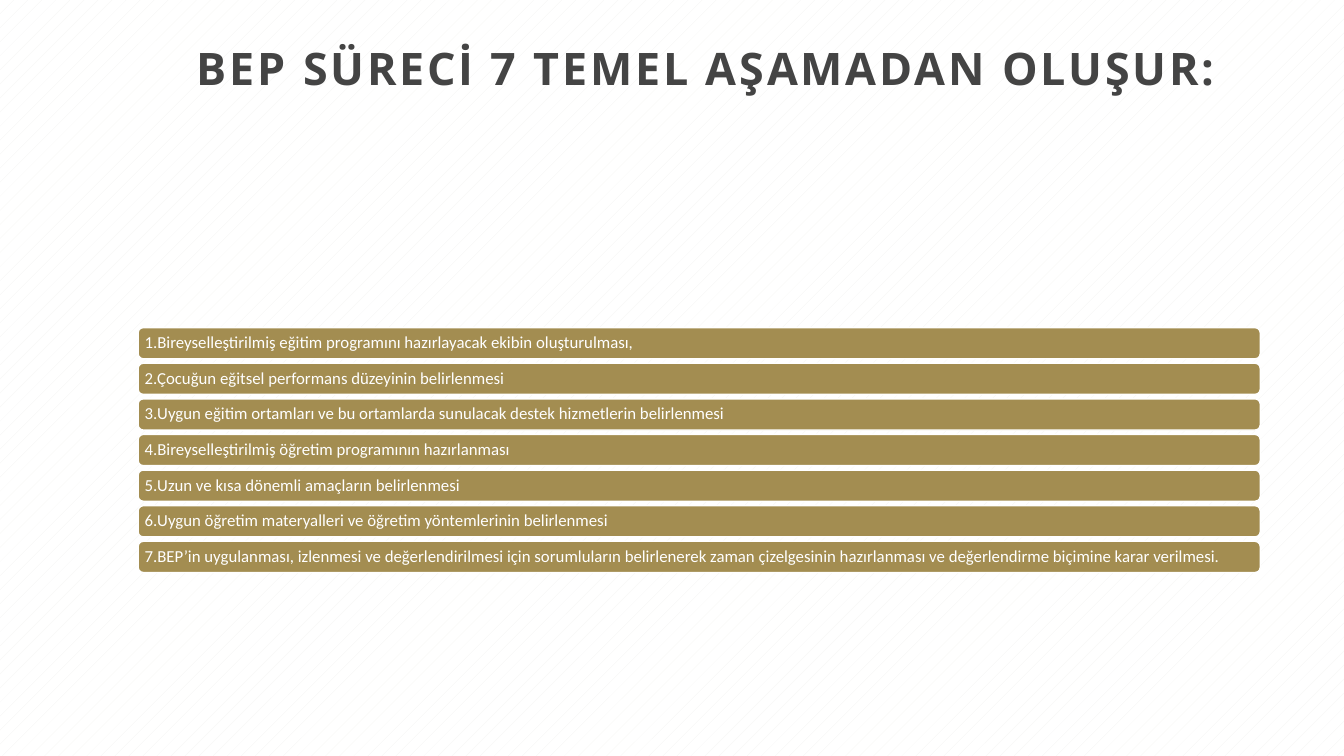
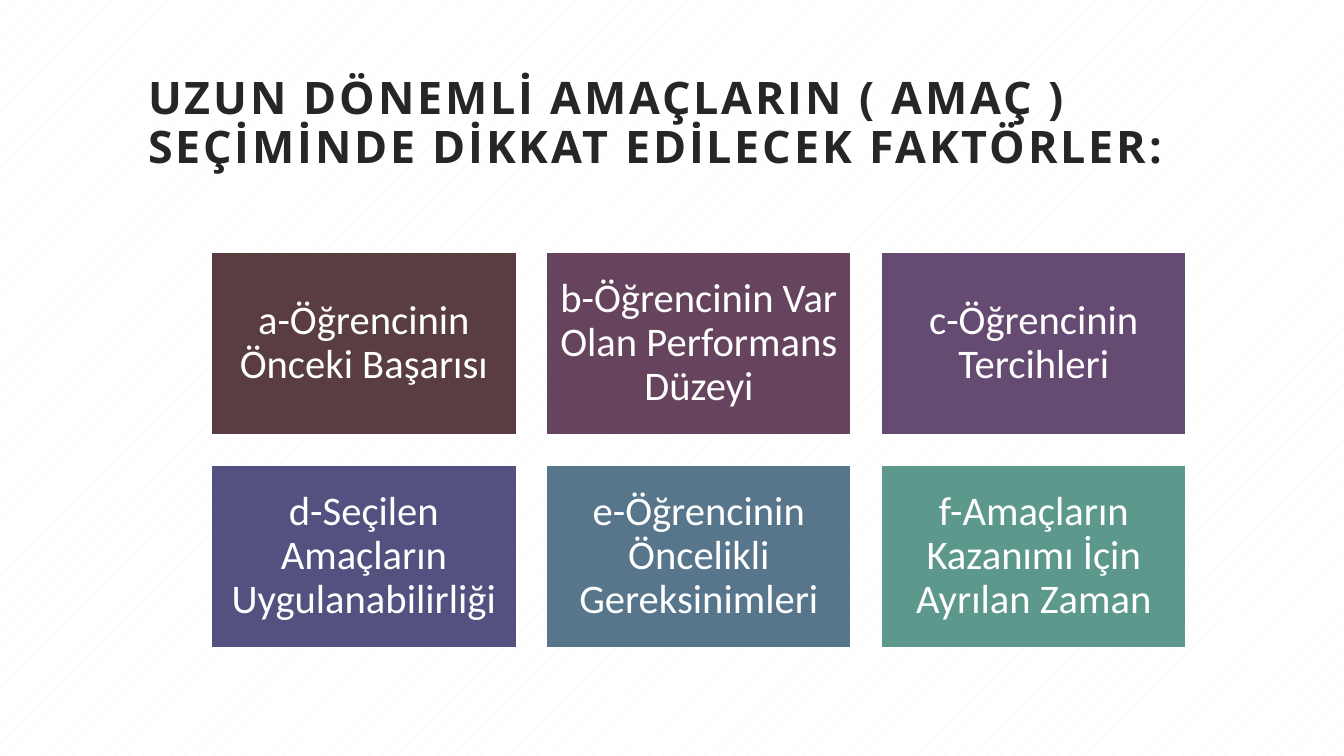
from pptx import Presentation
from pptx.dml.color import RGBColor
from pptx.enum import dml, shapes, text
from pptx.util import Inches, Pt

WHITE = "FFFFFF"
PATTERN_INK = "F3F3F2"
BAR_GOLD = "A38D51"
TITLE_FONT = "Open Sans"
BODY_FONT = "Calibri"
LINE_SPACING = 0.9
LEFT, CONTENT_WIDTH = 1.37, 11.13

STAGES = [
    "1.Bireyselleştirilmiş eğitim programını hazırlayacak ekibin oluşturulması,",
    "2.Çocuğun eğitsel performans düzeyinin belirlenmesi",
    "3.Uygun eğitim ortamları ve bu ortamlarda sunulacak destek hizmetlerin belirlenmesi",
    "4.Bireyselleştirilmiş öğretim programının hazırlanması",
    "5.Uzun ve kısa dönemli amaçların belirlenmesi",
    "6.Uygun öğretim materyalleri ve öğretim yöntemlerinin belirlenmesi",
    "7.BEP’in uygulanması, izlenmesi ve değerlendirilmesi için sorumluların "
    "belirlenerek zaman çizelgesinin hazırlanması ve değerlendirme biçimine karar verilmesi.",
]

FACTORS = [
    ("a-Öğrencinin Önceki Başarısı", "5A3D40"),
    ("b-Öğrencinin Var Olan Performans Düzeyi", "66445D"),
    ("c-Öğrencinin Tercihleri", "654A72"),
    ("d-Seçilen Amaçların Uygulanabilirliği", "52517F"),
    ("e-Öğrencinin Öncelikli Gereksinimleri", "57758B"),
    ("f-Amaçların Kazanımı İçin Ayrılan Zaman", "5D988C"),
]


def color(hex_code):
    return RGBColor.from_string(hex_code)


def add_patterned_slide(prs):
    slide = prs.slides.add_slide(prs.slide_layouts[6])
    fill = slide.background.fill
    fill.patterned()
    fill.pattern = dml.MSO_PATTERN.PERCENT_5
    fill.fore_color.rgb = color(PATTERN_INK)
    fill.back_color.rgb = color(WHITE)
    return slide


def write(frame, wording, font_name, size, ink, align, anchor, bold=False):
    """Fill a text frame with one wrapped paragraph and return its run."""
    frame.word_wrap = True
    frame.vertical_anchor = anchor
    frame.text = wording
    paragraph = frame.paragraphs[0]
    paragraph.alignment = align
    paragraph.line_spacing = LINE_SPACING
    run = paragraph.runs[0]
    run.font.name = font_name
    run.font.size = Pt(size)
    run.font.bold = bold
    run.font.color.rgb = color(ink)
    return run


def add_title(slide, wording, ink, align, anchor):
    title = slide.shapes.add_textbox(
        Inches(LEFT), Inches(0.42), Inches(CONTENT_WIDTH), Inches(1.63))
    run = write(title.text_frame, wording, TITLE_FONT, 32, ink, align, anchor, bold=True)
    run.font._element.set("spc", "200")


def add_panel(slide, kind, box, fill, wording, size, inset, align):
    """Add a filled, white-edged shape with white text inside."""
    panel = slide.shapes.add_shape(kind, *(Inches(length) for length in box))
    panel.shadow.inherit = False
    panel.fill.solid()
    panel.fill.fore_color.rgb = color(fill)
    panel.line.color.rgb = color(WHITE)
    panel.line.width = Pt(1)
    frame = panel.text_frame
    frame.margin_left = frame.margin_right = Inches(inset)
    frame.margin_top = frame.margin_bottom = Inches(inset)
    write(frame, wording, BODY_FONT, size, WHITE, align, text.MSO_ANCHOR.MIDDLE)


def add_stage_bars(slide):
    top, last_top, height = 3.25, 5.37, 0.31
    pitch = (last_top - top) / (len(STAGES) - 1)
    for index, stage in enumerate(STAGES):
        add_panel(slide, shapes.MSO_SHAPE.ROUNDED_RECTANGLE,
                  (LEFT, top + index * pitch, CONTENT_WIDTH, height),
                  BAR_GOLD, stage, 12, 0.05, text.PP_ALIGN.LEFT)


def add_factor_tiles(slide):
    left, top, width, height, columns = 2.1, 2.5, 3.02, 1.81, 3
    gap = width / 10
    for index, (factor, fill) in enumerate(FACTORS):
        row, column = divmod(index, columns)
        box = (left + column * (width + gap), top + row * (height + gap), width, height)
        add_panel(slide, shapes.MSO_SHAPE.RECTANGLE, box,
                  fill, factor, 29, 0.12, text.PP_ALIGN.CENTER)


def main():
    prs = Presentation()
    prs.slide_width, prs.slide_height = Inches(13.33), Inches(7.5)

    stages = add_patterned_slide(prs)
    add_title(stages, "\N{NO-BREAK SPACE}BEP SÜRECİ 7 TEMEL AŞAMADAN OLUŞUR:", "444444",
              text.PP_ALIGN.CENTER, text.MSO_ANCHOR.TOP)
    add_stage_bars(stages)

    factors = add_patterned_slide(prs)
    add_title(factors,
              "UZUN DÖNEMLİ AMAÇLARIN ( AMAÇ ) SEÇİMİNDE DİKKAT EDİLECEK FAKTÖRLER:",
              "262626", text.PP_ALIGN.LEFT, text.MSO_ANCHOR.MIDDLE)
    add_factor_tiles(factors)

    prs.save("out.pptx")


if __name__ == "__main__":
    main()
